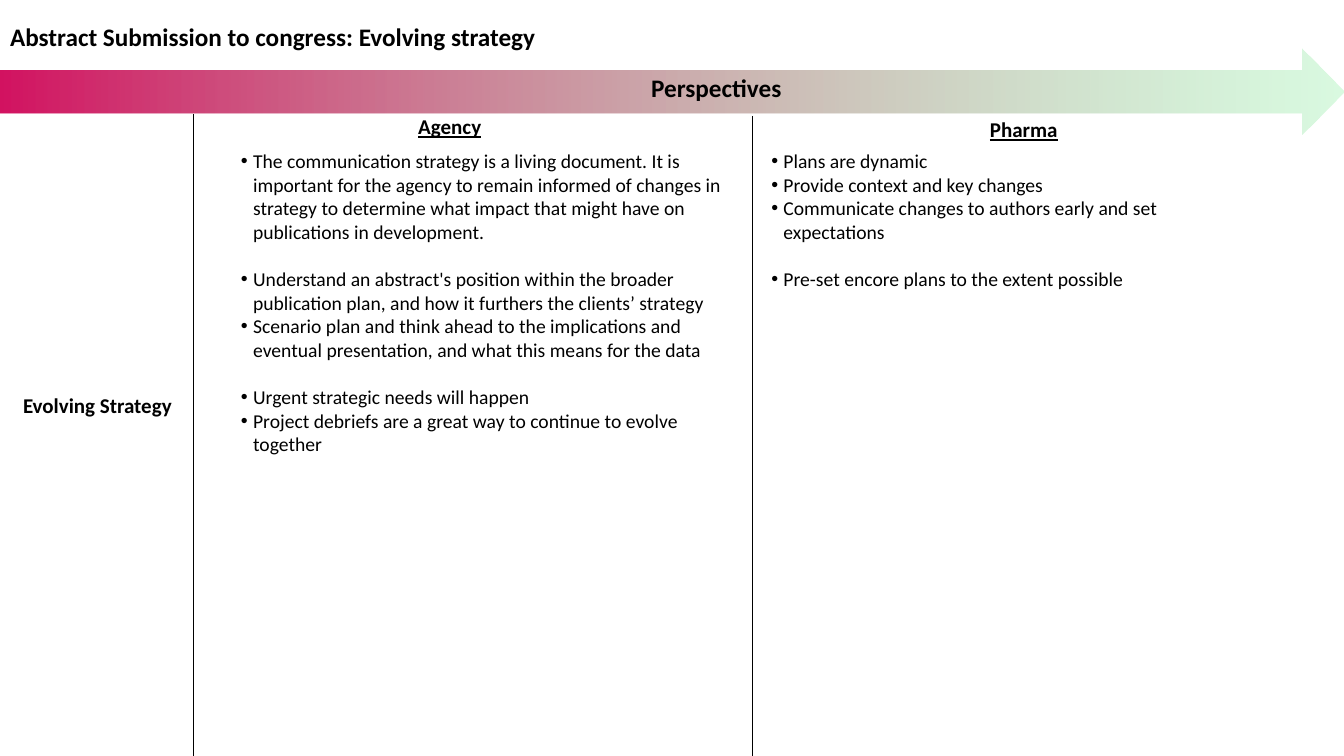
import dataclasses

import lxml.etree
import pptx
import pptx.dml.color
import pptx.enum.shapes
import pptx.enum.text
import pptx.oxml.ns
import pptx.util

Inches = pptx.util.Inches
Pt = pptx.util.Pt
qn = pptx.oxml.ns.qn


@dataclasses.dataclass(frozen=True)
class Theme:
    font: str = "Calibri"
    ink: str = "000000"
    arrow_start: str = "D31361"
    arrow_end: str = "94F0A8"
    arrow_end_alpha: int = 35
    heading_size: float = 18
    label_size: float = 15
    list_size: float = 14
    group_gap: float = 17
    rule_width: float = 0.5
    bullet_indent: float = 0.12


def rgb(value):
    return pptx.dml.color.RGBColor.from_string(value)


def format_text(paragraph, text, *, font, size, color, bold=False, underline=False, space_before=0):
    paragraph.alignment = pptx.enum.text.PP_ALIGN.LEFT
    paragraph.space_before = Pt(space_before)
    run = paragraph.add_run()
    run.text = text
    run.font.name = font
    run.font.size = Pt(size)
    run.font.color.rgb = rgb(color)
    run.font.bold = bold
    run.font.underline = underline


class SlideBuilder:
    def __init__(self, slide, theme):
        self.slide = slide
        self.theme = theme

    def place(self, holder, left, top, width, height):
        """Move a text holder and give it a top-anchored, wrapping frame."""
        holder.left, holder.top = Inches(left), Inches(top)
        holder.width, holder.height = Inches(width), Inches(height)
        frame = holder.text_frame
        frame.word_wrap = True
        frame.auto_size = pptx.enum.text.MSO_AUTO_SIZE.NONE
        frame.vertical_anchor = pptx.enum.text.MSO_ANCHOR.TOP
        return frame

    def themed_text(self, paragraph, text, size, **style):
        format_text(paragraph, text, font=self.theme.font, size=size, color=self.theme.ink, **style)

    def title(self, text, *box):
        frame = self.place(self.slide.shapes.title, *box)
        self.themed_text(frame.paragraphs[0], text, self.theme.heading_size, bold=True)

    def label(self, text, *box, size=None, underline=False):
        holder = self.slide.shapes.add_textbox(0, 0, 0, 0)
        frame = self.place(holder, *box)
        self.themed_text(frame.paragraphs[0], text, size or self.theme.label_size,
                         bold=True, underline=underline)

    def bullets(self, placeholder_index, groups, *box):
        """Fill a body placeholder; a line's gap separates the groups."""
        frame = self.place(self.slide.placeholders[placeholder_index], *box)
        paragraph = None
        for group_number, group in enumerate(groups):
            for item_number, item in enumerate(group):
                paragraph = frame.paragraphs[0] if paragraph is None else frame.add_paragraph()
                starts_group = group_number > 0 and item_number == 0
                self.themed_text(paragraph, item, self.theme.list_size,
                                 space_before=self.theme.group_gap if starts_group else 0)
                self.add_bullet(paragraph)

    def add_bullet(self, paragraph):
        properties = paragraph._p.get_or_add_pPr()
        indent = Inches(self.theme.bullet_indent)
        properties.set("marL", str(indent))
        properties.set("indent", str(-indent))
        lxml.etree.SubElement(properties, qn("a:buFont"), typeface="Arial")
        lxml.etree.SubElement(properties, qn("a:buChar"), char="•")

    def gradient_arrow(self, left, top, width, height):
        arrow = self.slide.shapes.add_shape(
            pptx.enum.shapes.MSO_SHAPE.RIGHT_ARROW,
            Inches(left), Inches(top), Inches(width), Inches(height))
        arrow.shadow.inherit = False
        arrow.line.fill.background()
        arrow.fill.gradient()
        arrow.fill.gradient_angle = 0
        start, end = arrow.fill.gradient_stops
        start.position, end.position = 0, 1
        start.color.rgb = rgb(self.theme.arrow_start)
        end.color.rgb = rgb(self.theme.arrow_end)
        end_color = list(arrow.element.spPr.iter(qn("a:srgbClr")))[-1]
        lxml.etree.SubElement(end_color, qn("a:alpha"), val=str(self.theme.arrow_end_alpha * 1000))

    def vertical_rule(self, x, top, bottom):
        rule = self.slide.shapes.add_connector(
            pptx.enum.shapes.MSO_CONNECTOR.STRAIGHT,
            Inches(x), Inches(top), Inches(x), Inches(bottom))
        rule.line.color.rgb = rgb(self.theme.ink)
        rule.line.width = Pt(self.theme.rule_width)
        lxml.etree.SubElement(rule.element.spPr, qn("a:effectLst"))


AGENCY_POINTS = [
    ["The communication strategy is a living document. It is important for the agency to remain "
     "informed of changes in strategy to determine what impact that might have on publications "
     "in development."],
    ["Understand an abstract's position within the broader publication plan, and how it furthers "
     "the clients’ strategy",
     "Scenario plan and think ahead to the implications and eventual presentation, and what this "
     "means for the data"],
    ["Urgent strategic needs will happen",
     "Project debriefs are a great way to continue to evolve together"],
]
PHARMA_POINTS = [
    ["Plans are dynamic",
     "Provide context and key changes",
     "Communicate changes to authors early and set expectations"],
    ["Pre-set encore plans to the extent possible"],
]


def main():
    width, height = 13.33, 7.5
    deck = pptx.Presentation()
    deck.slide_width, deck.slide_height = Inches(width), Inches(height)
    two_content_layout = deck.slide_layouts[3]
    theme = Theme()
    builder = SlideBuilder(deck.slides.add_slide(two_content_layout), theme)

    builder.gradient_arrow(0, 0.48, width, 0.85)
    builder.title("Abstract Submission to congress: Evolving strategy", 0, 0.16, 11.14, 0.4)
    builder.label("Perspectives", 6.36, 0.67, 4.17, 0.4, size=theme.heading_size)
    builder.label("Evolving Strategy", 0.13, 3.84, 1.69, 0.35)

    builder.vertical_rule(1.92, 1.13, height)
    builder.label("Agency", 4.05, 1.08, 1.46, 0.35, underline=True)
    builder.bullets(1, AGENCY_POINTS, 2.29, 1.43, 5.06, 3.16)

    builder.vertical_rule(7.46, 1.15, height)
    builder.label("Pharma", 9.72, 1.11, 1.63, 0.35, underline=True)
    builder.bullets(2, PHARMA_POINTS, 7.55, 1.43, 4.48, 1.75)

    deck.save("out.pptx")


if __name__ == "__main__":
    main()
